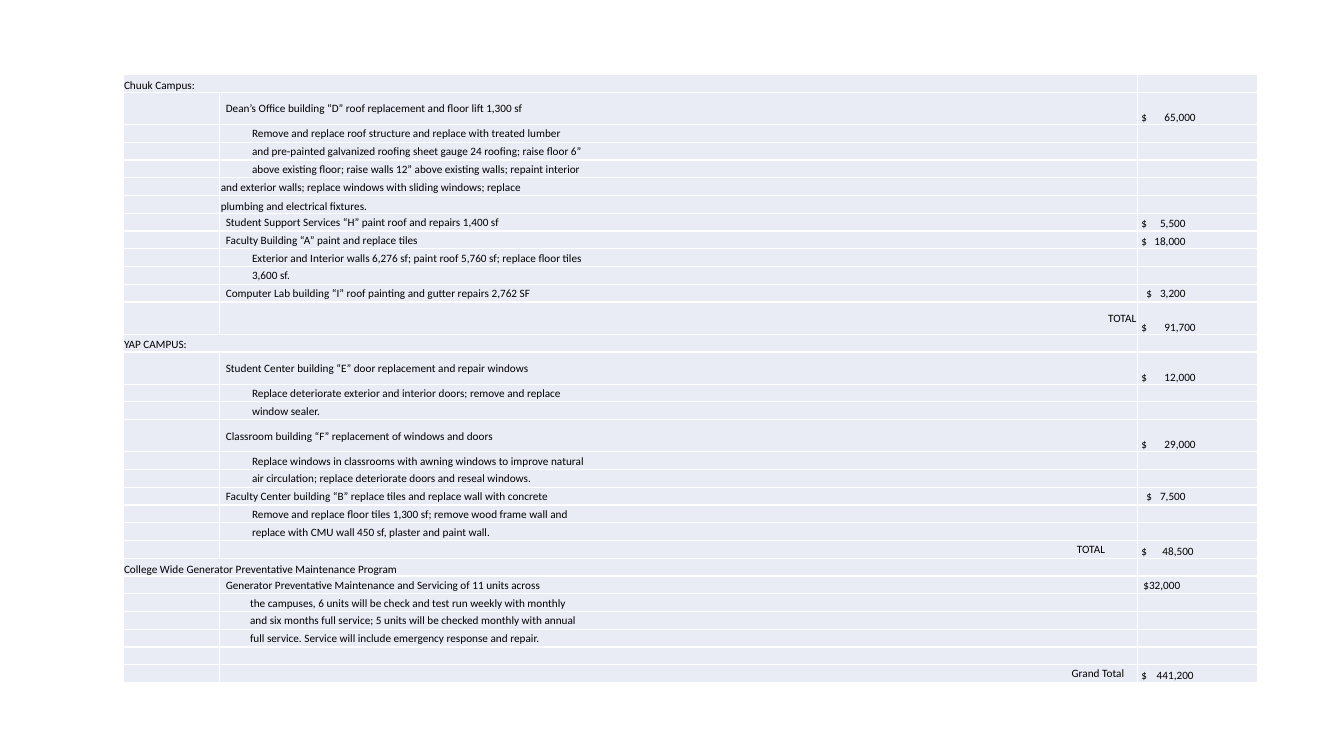
"""Build the campus repair and maintenance budget slide."""
from lxml import etree
from pptx import Presentation
from pptx.dml.color import RGBColor
from pptx.enum.text import MSO_ANCHOR, PP_ALIGN
from pptx.oxml.ns import qn
from pptx.util import Inches, Pt

BOTTOM, MIDDLE = MSO_ANCHOR.BOTTOM, MSO_ANCHOR.MIDDLE
LEFT, RIGHT = PP_ALIGN.LEFT, PP_ALIGN.RIGHT
BAND = RGBColor(0xE9, 0xEB, 0xF5)
BLACK = RGBColor(0, 0, 0)
FONT, SIZE = "Calibri", Pt(8)

ROWS = [
    ("heading", "Chuuk Campus:"),
    ("item", "Dean’s Office building “D” roof replacement and floor lift 1,300 sf", "wide", "65,000"),
    ("detail", "Remove and replace roof structure and replace with treated lumber"),
    ("detail", "and pre-painted galvanized roofing sheet gauge 24 roofing; raise floor 6”"),
    ("detail", "above existing floor; raise walls 12” above existing walls; repaint interior"),
    ("flush", "and exterior walls; replace windows with sliding windows; replace"),
    ("flush low", "plumbing and electrical fixtures."),
    ("item", "Student Support Services “H” paint roof and repairs 1,400 sf", "narrow", "5,500"),
    ("item", "Faculty Building “A” paint and replace tiles", "narrow", "18,000"),
    ("detail", "Exterior and Interior walls 6,276 sf; paint roof 5,760 sf; replace floor tiles"),
    ("detail", "3,600 sf."),
    ("item", "Computer Lab building “I” roof painting and gutter repairs 2,762 SF", "inset", "3,200"),
    ("total", "TOTAL", "wide", "91,700"),
    ("heading", "YAP CAMPUS:"),
    ("item", "Student Center building “E” door replacement and repair windows", "wide", "12,000"),
    ("detail", "Replace deteriorate exterior and interior doors; remove and replace"),
    ("detail", "window sealer."),
    ("item", "Classroom building “F” replacement of windows and doors", "wide", "29,000"),
    ("detail", "Replace windows in classrooms with awning windows to improve natural"),
    ("detail", "air circulation; replace deteriorate doors and reseal windows."),
    ("item", "Faculty Center building “B” replace tiles and replace wall with concrete", "inset", "7,500"),
    ("detail", "Remove and replace floor tiles 1,300 sf; remove wood frame wall and"),
    ("detail", "replace with CMU wall 450 sf, plaster and paint wall."),
    ("inset total", "TOTAL", "medium", "48,500"),
    ("heading", "College Wide Generator Preventative Maintenance Program"),
    ("item", "Generator Preventative Maintenance and Servicing of 11 units across", "joined", "32,000"),
    ("generator", "the campuses, 6 units will be check and test run weekly with monthly"),
    ("generator", "and six months full service; 5 units will be checked monthly with annual"),
    ("generator", "full service. Service will include emergency response and repair."),
    ("flush", ""),
    ("grand total", "Grand Total", "medium", "441,200"),
]
TEXT_STYLES = {
    "heading": (0.01, 0.01, BOTTOM, LEFT),
    "item": (0.06, 0.01, MIDDLE, LEFT),
    "detail": (0.32, 0.01, MIDDLE, LEFT),
    "generator": (0.3, 0.01, MIDDLE, LEFT),
    "flush": (0.01, 0.01, MIDDLE, LEFT),
    "flush low": (0.01, 0.01, BOTTOM, LEFT),
    "total": (0.01, 0.01, MIDDLE, RIGHT),
    "inset total": (0.01, 0.32, MIDDLE, RIGHT),
    "grand total": (0.01, 0.13, MIDDLE, RIGHT),
}
AMOUNT_STYLES = {
    "wide": (0.04, BOTTOM, 0.54),
    "medium": (0.04, BOTTOM, 0.52),
    "narrow": (0.04, BOTTOM, 0.44),
    "inset": (0.09, MIDDLE, 0.39),
    "joined": (0.06, MIDDLE, None),
}
COLUMNS = (0.96, 9.1, 1.19)
TABLE_LEFT, TABLE_TOP, TABLE_HEIGHT = 1.22, 0.74, 6.04
TALL_ROW = 0.32


def write_cell(cell, text, left, right, anchor, align, tab=None):
    cell.fill.solid()
    cell.fill.fore_color.rgb = BAND
    cell.margin_left, cell.margin_right = Inches(left), Inches(right)
    cell.margin_top, cell.margin_bottom = Inches(0.01), 0
    cell.vertical_anchor = anchor
    para = cell.text_frame.paragraphs[0]
    para.text = text
    para.alignment = align
    if tab:
        stops = etree.SubElement(para._p.get_or_add_pPr(), qn("a:tabLst"))
        etree.SubElement(stops, qn("a:tab"), pos=str(Inches(tab)), algn="r")
    for span in para.runs:
        span.font.name, span.font.size = FONT, SIZE
        span.font.color.rgb = BLACK
    if not text:
        etree.SubElement(para._p, qn("a:endParaRPr"), sz=str(int(SIZE.pt * 100)))


def main():
    deck = Presentation()
    deck.slide_width, deck.slide_height = Inches(13.33), Inches(7.5)
    page = deck.slides.add_slide(deck.slide_layouts[6])
    table = page.shapes.add_table(
        len(ROWS), len(COLUMNS), Inches(TABLE_LEFT), Inches(TABLE_TOP),
        Inches(sum(COLUMNS)), Inches(TABLE_HEIGHT)).table
    table.first_row = table.horz_banding = False
    for column, width in zip(table.columns, COLUMNS):
        column.width = Inches(width)

    tall_count = sum("wide" in entry for entry in ROWS)
    short_row = (TABLE_HEIGHT - tall_count * TALL_ROW) / (len(ROWS) - tall_count)
    for index, (kind, text, *amount) in enumerate(ROWS):
        table.rows[index].height = Inches(TALL_ROW if "wide" in amount else short_row)
        cells = [table.cell(index, column) for column in range(len(COLUMNS))]
        for cell in cells:
            write_cell(cell, "", *TEXT_STYLES["flush"])
        label = cells[1]
        if kind == "heading":
            label = cells[0]
            label.merge(cells[1])
        if text:
            write_cell(label, text, *TEXT_STYLES[kind])
        if amount:
            style, value = amount
            left, anchor, tab = AMOUNT_STYLES[style]
            price = f"$\t{value}" if tab else f"${value}"
            write_cell(cells[2], price, left, 0.01, anchor, LEFT, tab)
    deck.save("out.pptx")


if __name__ == "__main__":
    main()
